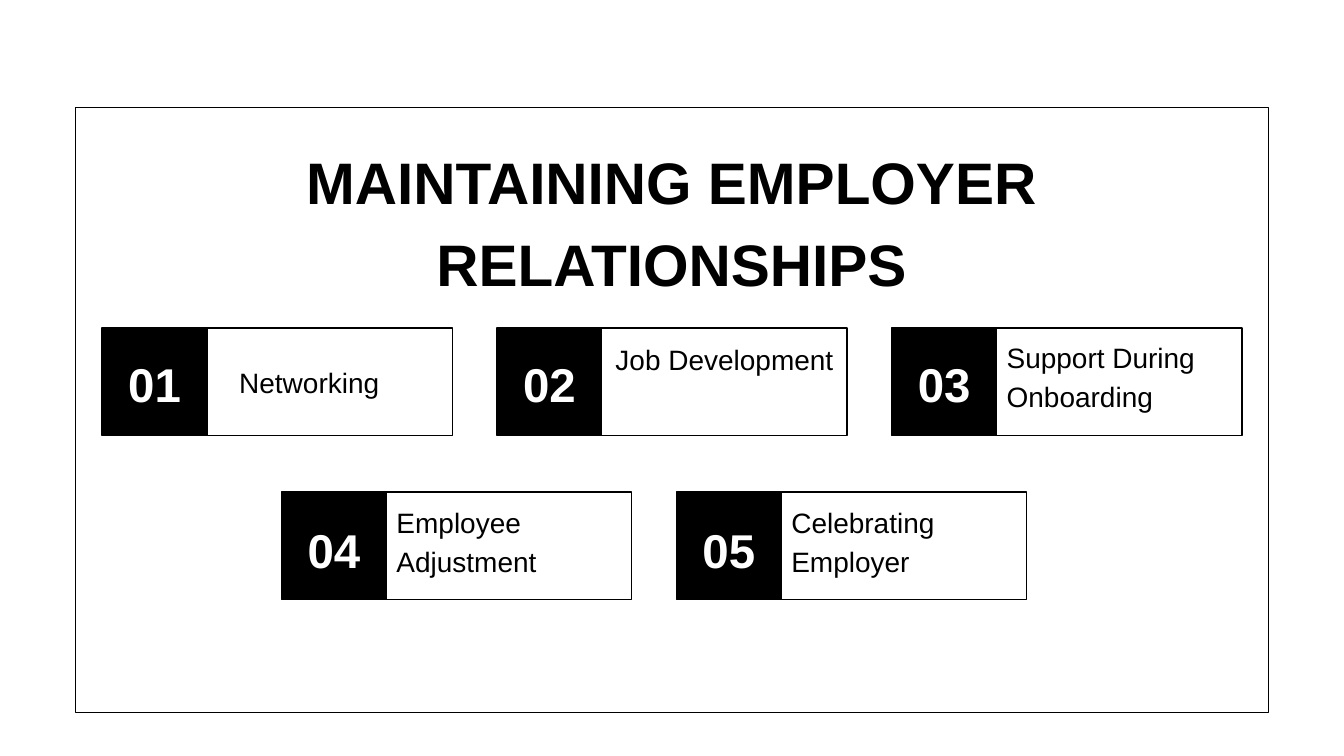
from pptx import Presentation
from pptx.dml.color import RGBColor
from pptx.enum.shapes import MSO_SHAPE
from pptx.enum.text import MSO_ANCHOR, PP_ALIGN
from pptx.util import Inches, Pt

RECTANGLE = MSO_SHAPE.RECTANGLE
TOP = MSO_ANCHOR.TOP
LEFT, CENTER = PP_ALIGN.LEFT, PP_ALIGN.CENTER

COLORS = {"black": "000000", "white": "FFFFFF"}
CARD_PITCH = 5.875
NUMBER_WIDTH, LABEL_WIDTH, CARD_HEIGHT = 1.56, 3.65, 1.6


def write_text(text_frame, text, *, size, spacing, color="black", bold=False, align=LEFT):
    paragraph = text_frame.paragraphs[0]
    paragraph.alignment = align
    paragraph.line_spacing = Pt(spacing)
    run = paragraph.add_run()
    run.text = text
    run.font.name = "Arial"
    run.font.size = Pt(size)
    run.font.bold = bold
    run.font.color.rgb = RGBColor.from_string(COLORS[color])


class SlideBuilder:
    """Draws black and white outlined cards on one slide."""

    def __init__(self, slide):
        self.slide = slide

    def box(self, left, top, width, height, fill=None):
        shape = self.slide.shapes.add_shape(
            RECTANGLE, Inches(left), Inches(top), Inches(width), Inches(height))
        shape.shadow.inherit = False
        if fill:
            shape.fill.solid()
            shape.fill.fore_color.rgb = RGBColor.from_string(COLORS[fill])
        else:
            shape.fill.background()
        shape.line.color.rgb = RGBColor.from_string(COLORS["black"])
        shape.line.width = Pt(1.5)

    def text(self, left, top, width, height, text, **text_format):
        shape = self.slide.shapes.add_textbox(
            Inches(left), Inches(top), Inches(width), Inches(height))
        text_frame = shape.text_frame
        text_frame.word_wrap = True
        text_frame.vertical_anchor = TOP
        text_frame.margin_left = text_frame.margin_right = 0
        text_frame.margin_top = text_frame.margin_bottom = 0
        write_text(text_frame, text, **text_format)

    def card(self, left, top, number, label, *, number_drop, label_drop,
             indent=0.15, align=LEFT):
        label_left = left + NUMBER_WIDTH
        self.box(label_left, top, LABEL_WIDTH, CARD_HEIGHT)
        self.box(left, top, NUMBER_WIDTH, CARD_HEIGHT, fill="black")
        self.text(label_left + indent, top + label_drop, 3.35, 1.16, label,
                  size=30, spacing=42, align=align)
        self.text(left + 0.125, top + number_drop, 1.31, 0.95, f"{number:02}",
                  size=50.8, spacing=71.1, color="white", bold=True, align=CENTER)


def main():
    presentation = Presentation()
    presentation.slide_width = Inches(20)
    presentation.slide_height = Inches(11.25)
    builder = SlideBuilder(presentation.slides.add_slide(presentation.slide_layouts[6]))

    builder.box(1.125, 1.6, 17.75, 9)
    builder.text(2.89, 2, 14.21, 2.41, "MAINTAINING EMPLOYER RELATIONSHIPS",
                 size=62.7, spacing=87.8, bold=True, align=CENTER)

    rows = [
        (1.52, 4.88, 0.26, [
            ("Networking", {"label_drop": 0.47, "indent": 0.48}),
            ("Job Development", {"label_drop": 0.13, "align": CENTER}),
            ("Support During Onboarding", {"label_drop": 0.1}),
        ]),
        (4.19, 7.32, 0.3, [
            ("Employee Adjustment", {"label_drop": 0.12}),
            ("Celebrating Employer", {"label_drop": 0.12}),
        ]),
    ]
    number = 0
    for row_left, top, number_drop, cards in rows:
        for column, (label, placement) in enumerate(cards):
            number += 1
            builder.card(row_left + column * CARD_PITCH, top, number, label,
                         number_drop=number_drop, **placement)

    presentation.save("out.pptx")


if __name__ == "__main__":
    main()
